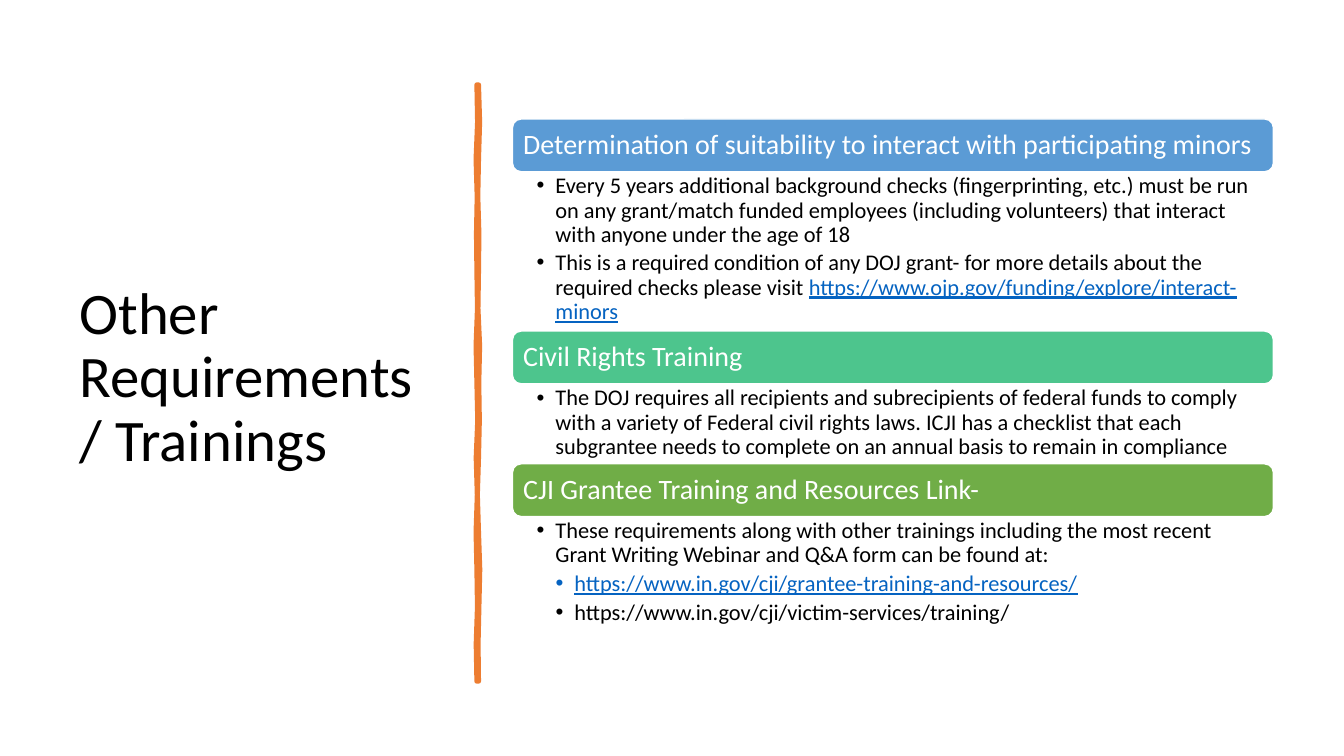
from lxml import etree
from pptx import Presentation
from pptx.dml.color import RGBColor
from pptx.enum.shapes import MSO_SHAPE
from pptx.enum.text import MSO_ANCHOR, PP_ALIGN
from pptx.oxml.ns import qn
from pptx.util import Pt

ROUNDED = MSO_SHAPE.ROUNDED_RECTANGLE
MIDDLE, TOP = MSO_ANCHOR.MIDDLE, MSO_ANCHOR.TOP
LEFT = PP_ALIGN.LEFT

FONT = "Calibri"
BLACK = RGBColor(0x00, 0x00, 0x00)
WHITE = RGBColor(0xFF, 0xFF, 0xFF)
ORANGE = RGBColor(0xED, 0x7D, 0x31)
BLUE = RGBColor(0x5B, 0x9B, 0xD5)
TEAL = RGBColor(0x4D, 0xC5, 0x8D)
GREEN = RGBColor(0x70, 0xAD, 0x47)
LINK = RGBColor(0x05, 0x63, 0xC1)

TITLE = "Other Requirements / Trainings"

# Section: heading, colour, body height, bullets.
# Bullet: level, then (text, is a web address) pairs.
SECTIONS = [
    ("Determination of suitability to interact with participating minors", BLUE, 113.8, [
        (1, [("Every 5 years additional background checks (fingerprinting, etc.) must be run "
              "on any grant/match funded employees (including volunteers) that interact "
              "with anyone under the age of 18", False)]),
        (1, [("This is a required condition of any DOJ grant- for more details about the "
              "required checks please visit ", False),
             ("https://www.ojp.gov/funding/explore/interact-minors", True)]),
    ]),
    ("Civil Rights Training", TEAL, 57.1, [
        (1, [("The DOJ requires all recipients and subrecipients of federal funds to comply "
              "with a variety of Federal civil rights laws. ICJI has a checklist that each "
              "subgrantee needs to complete on an annual basis to remain in compliance", False)]),
    ]),
    ("CJI Grantee Training and Resources Link-", GREEN, 82.8, [
        (1, [("These requirements along with other trainings including the most recent "
              "Grant Writing Webinar and Q&A form can be found at:", False)]),
        (2, [("https://www.in.gov/cji/grantee-training-and-resources/", True)]),
        (2, [("https://www.in.gov/cji/victim-services/training/", False)]),
    ]),
]

SECTION_LEFT, SECTION_TOP, SECTION_WIDTH = 366, 85, 543.6
HEADING_HEIGHT = 37.7
INDENT = 13.5

# Hand-drawn divider: sideways drift of each edge at equal steps down
DIVIDER_LEFT, DIVIDER_RIGHT = 340.5, 342
DIVIDER_TOP, DIVIDER_BOTTOM = 60.5, 486.7
RIGHT_DRIFT = [0, 0.8, 0, -0.5, 0.3, 0, -0.4, 0.8, 0.2, 0.6, 0, -0.8, 0, 0.9, 0.3, -0.3, 0]
LEFT_DRIFT = [0, 0.5, -0.6, 0.2, -0.3, 0, 0.4, -0.6, 0, 0.6, -0.5, 0.3, -0.6, 0, 0.4, -0.5, 0]


def set_frame(frame, anchor, insets):
    """Wrap the text and set its anchor and left, top, right, bottom insets."""
    frame.word_wrap = True
    frame.vertical_anchor = anchor
    (frame.margin_left, frame.margin_top,
     frame.margin_right, frame.margin_bottom) = map(Pt, insets)


def add_span(para, text, size, color, underline=False):
    span = para.add_run()
    span.text = text
    span.font.name = FONT
    span.font.size = Pt(size)
    span.font.color.rgb = color
    if underline:
        span.font.underline = True


def start_para(para):
    para.alignment = LEFT
    para.line_spacing = 0.9


def add_bullet(para, level):
    properties = para._p.get_or_add_pPr()
    properties.set("marL", str(Pt(INDENT * level)))
    properties.set("indent", str(-Pt(INDENT)))
    etree.SubElement(properties, qn("a:buFont")).set("typeface", "Arial")
    etree.SubElement(properties, qn("a:buChar")).set("char", "•")


def add_title(page):
    box = page.shapes.add_textbox(Pt(49.7), Pt(50.4), Pt(269.3), Pt(440))
    set_frame(box.text_frame, MIDDLE, (7.2, 3.6, 7.2, 3.6))
    para = box.text_frame.paragraphs[0]
    start_para(para)
    add_span(para, TITLE, 42, BLACK)


def add_divider(page):
    step = (DIVIDER_BOTTOM - DIVIDER_TOP) / (len(RIGHT_DRIFT) - 1)
    right = [(DIVIDER_RIGHT + drift, DIVIDER_TOP + i * step)
             for i, drift in enumerate(RIGHT_DRIFT)]
    left = [(DIVIDER_LEFT + drift, DIVIDER_TOP + i * step)
            for i, drift in enumerate(LEFT_DRIFT)]
    outline = [(Pt(x), Pt(y)) for x, y in right + left[::-1]]
    builder = page.shapes.build_freeform(*outline[0])
    builder.add_line_segments(outline[1:], close=True)
    divider = builder.convert_to_shape()
    divider.shadow.inherit = False
    divider.fill.solid()
    divider.fill.fore_color.rgb = ORANGE
    divider.line.color.rgb = ORANGE
    divider.line.width = Pt(3.25)


def add_heading(page, top, text, color):
    bar = page.shapes.add_shape(ROUNDED, Pt(SECTION_LEFT), Pt(top),
                                Pt(SECTION_WIDTH), Pt(HEADING_HEIGHT))
    bar.shadow.inherit = False
    bar.fill.solid()
    bar.fill.fore_color.rgb = color
    bar.line.color.rgb = WHITE
    bar.line.width = Pt(1)
    # The rounded corners add 1.8 pt to the insets
    set_frame(bar.text_frame, MIDDLE, (5.8, 4, 5.8, 4))
    para = bar.text_frame.paragraphs[0]
    start_para(para)
    add_span(para, text, 20, WHITE)


def add_body(page, top, height, bullets):
    box = page.shapes.add_textbox(Pt(SECTION_LEFT), Pt(top), Pt(SECTION_WIDTH), Pt(height))
    frame = box.text_frame
    set_frame(frame, TOP, (17.26, 2, 11.4, 2))
    for number, (level, spans) in enumerate(bullets):
        para = frame.add_paragraph() if number else frame.paragraphs[0]
        start_para(para)
        para.space_after = Pt(3.2)
        add_bullet(para, level)
        for text, is_link in spans:
            add_span(para, text, 16, LINK if is_link else BLACK, is_link)


def main():
    deck = Presentation()
    deck.slide_width, deck.slide_height = Pt(960), Pt(540)
    page = deck.slides.add_slide(deck.slide_layouts[6])
    add_title(page)
    add_divider(page)
    top = SECTION_TOP
    for heading, color, body_height, bullets in SECTIONS:
        add_heading(page, top, heading, color)
        add_body(page, top + HEADING_HEIGHT, body_height, bullets)
        top += HEADING_HEIGHT + body_height
    deck.save("out.pptx")


if __name__ == "__main__":
    main()
